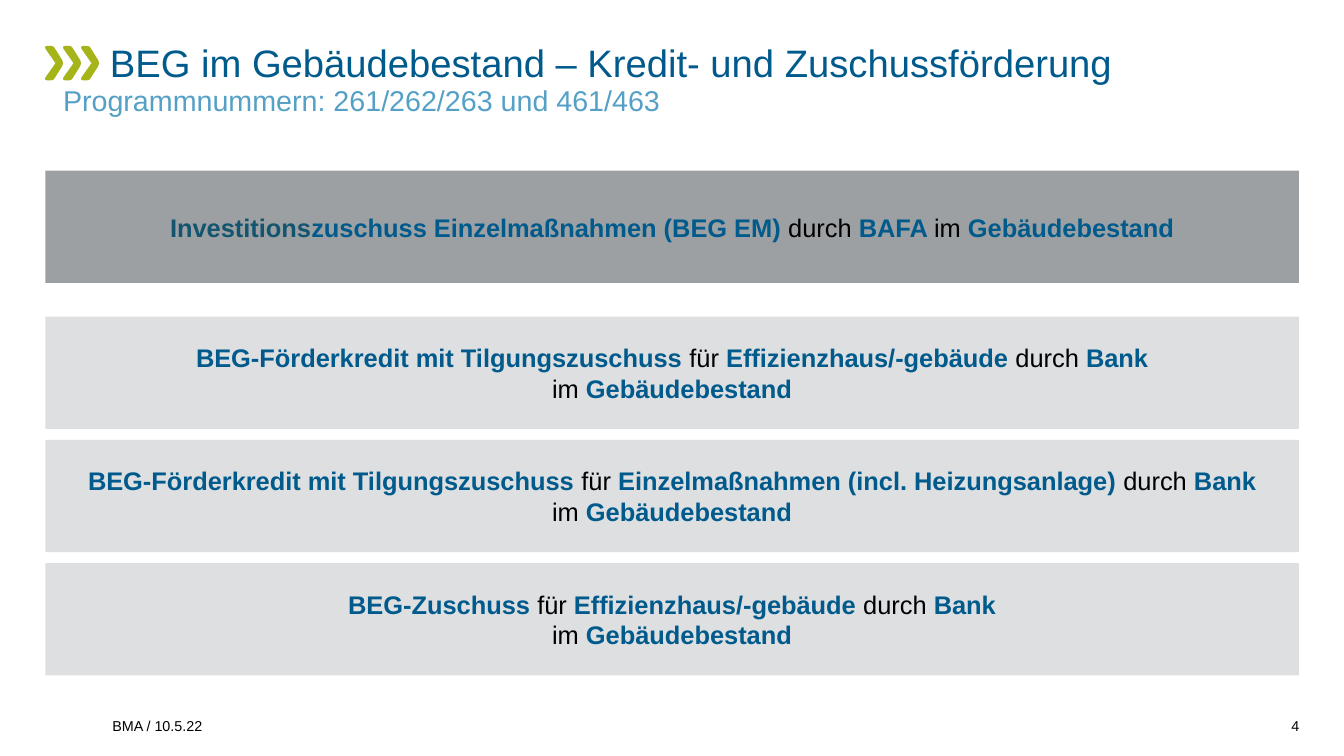
"""Build the slide on BEG loan and grant funding for existing buildings."""
from pptx import Presentation
from pptx.dml.color import RGBColor
from pptx.enum.shapes import MSO_SHAPE
from pptx.enum.text import MSO_ANCHOR, MSO_AUTO_SIZE, PP_ALIGN
from pptx.util import Pt

COLORS = {
    "blue": "005A8C", "dark": "13556F", "black": "000000", "sky": "55A0C6",
    "green": "A4B419", "gray": "9CA0A3", "light": "DEDFE1",
}
LEFT, WIDTH = 28.5, 787.7
BAR_HEIGHT, BAR_STEP = 70.6, 77.5


def color(name):
    return RGBColor.from_string(COLORS[name])


def set_text(shape, text, size, tint, anchor=MSO_ANCHOR.TOP, align=PP_ALIGN.LEFT):
    frame = shape.text_frame
    frame.word_wrap = True
    frame.auto_size = MSO_AUTO_SIZE.NONE
    frame.vertical_anchor = anchor
    frame.margin_left = frame.margin_right = frame.margin_top = frame.margin_bottom = 0
    frame.text = text
    para = frame.paragraphs[0]
    para.alignment = align
    para.font.name = "Arial"
    para.font.size = Pt(size)
    para.font.color.rgb = color(tint)
    return para


deck = Presentation()
deck.slide_width, deck.slide_height = Pt(844.56), Pt(475.2)
page = deck.slides.add_slide(deck.slide_layouts[5])

upper = [(6.7, 10.8), (0.5, 2), (0.1, 1), (0.4, 0.3), (1.4, 0), (3.9, 0),
         (5, 0.2), (5.8, 0.8), (10.9, 8.9), (11.4, 10.8)]
lower = [(x, 21.6 - y) for x, y in reversed(upper[1:-1])]
for index in range(3):
    points = [(Pt(28.2 + 11.3 * index + x), Pt(28.9 + y)) for x, y in upper + lower]
    builder = page.shapes.build_freeform(*points[0])
    builder.add_line_segments(points[1:])
    chevron = builder.convert_to_shape()
    chevron.shadow.inherit = False
    chevron.fill.solid()
    chevron.fill.fore_color.rgb = color("green")
    chevron.line.fill.background()

title = page.shapes.title
title.left, title.top, title.width, title.height = Pt(39.6), Pt(26.8), Pt(776.9), Pt(29.5)
para = set_text(title, "BEG im Gebäudebestand – Kredit- und Zuschussförderung", 24, "blue")
para.line_spacing = 0.95
para._p.get_or_add_pPr().set("indent", str(Pt(29.5)))

subtitle = page.shapes.add_textbox(Pt(39.6), Pt(53.5), Pt(776.9), Pt(25.9))
para = set_text(subtitle, "Programmnummern: 261/262/263 und 461/463", 18, "sky")
para.line_spacing = 0.95

place = [("im ", "black"), ("Gebäudebestand", "blue")]
provider = [("durch ", "black"), ("Bank", "blue")]
loan = [("BEG-Förderkredit mit Tilgungszuschuss ", "blue"), ("für ", "black")]
house = [("Effizienzhaus/-gebäude ", "blue")]
measures = [("Einzelmaßnahmen (incl. Heizungsanlage) ", "blue")]
grant = [("BEG-Zuschuss ", "blue"), ("für ", "black")]
agency = [("Investitions", "dark"), ("zuschuss Einzelmaßnahmen (BEG EM) ", "blue"),
          ("durch ", "black"), ("BAFA ", "blue")]

bars = [(107.3, "gray", [agency + place])]
for index, program in enumerate([loan + house, loan + measures, grant + house]):
    bars.append((199 + BAR_STEP * index, "light", [program + provider, place]))

for top, fill, lines in bars:
    bar = page.shapes.add_shape(MSO_SHAPE.RECTANGLE, Pt(LEFT), Pt(top), Pt(WIDTH), Pt(BAR_HEIGHT))
    bar.shadow.inherit = False
    bar.fill.solid()
    bar.fill.fore_color.rgb = color(fill)
    bar.line.fill.background()
    frame = bar.text_frame
    frame.word_wrap = True
    frame.vertical_anchor = MSO_ANCHOR.MIDDLE
    frame.margin_left = frame.margin_right = frame.margin_top = frame.margin_bottom = Pt(3)
    for number, line in enumerate(lines):
        para = frame.add_paragraph() if number else frame.paragraphs[0]
        para.alignment = PP_ALIGN.CENTER
        for text, tint in line:
            span = para.add_run()
            span.text = text
            span.font.name = "Arial"
            span.font.size = Pt(16)
            span.font.bold = tint != "black"
            span.font.color.rgb = color(tint)

for left, width, text, align in [(70.6, 712.8, "BMA / 10.5.22", PP_ALIGN.LEFT),
                                 (787, 29.5, "4", PP_ALIGN.RIGHT)]:
    box = page.shapes.add_textbox(Pt(left), Pt(441.4), Pt(width), Pt(20.2))
    set_text(box, text, 9, "black", MSO_ANCHOR.BOTTOM, align)

deck.save("out.pptx")
